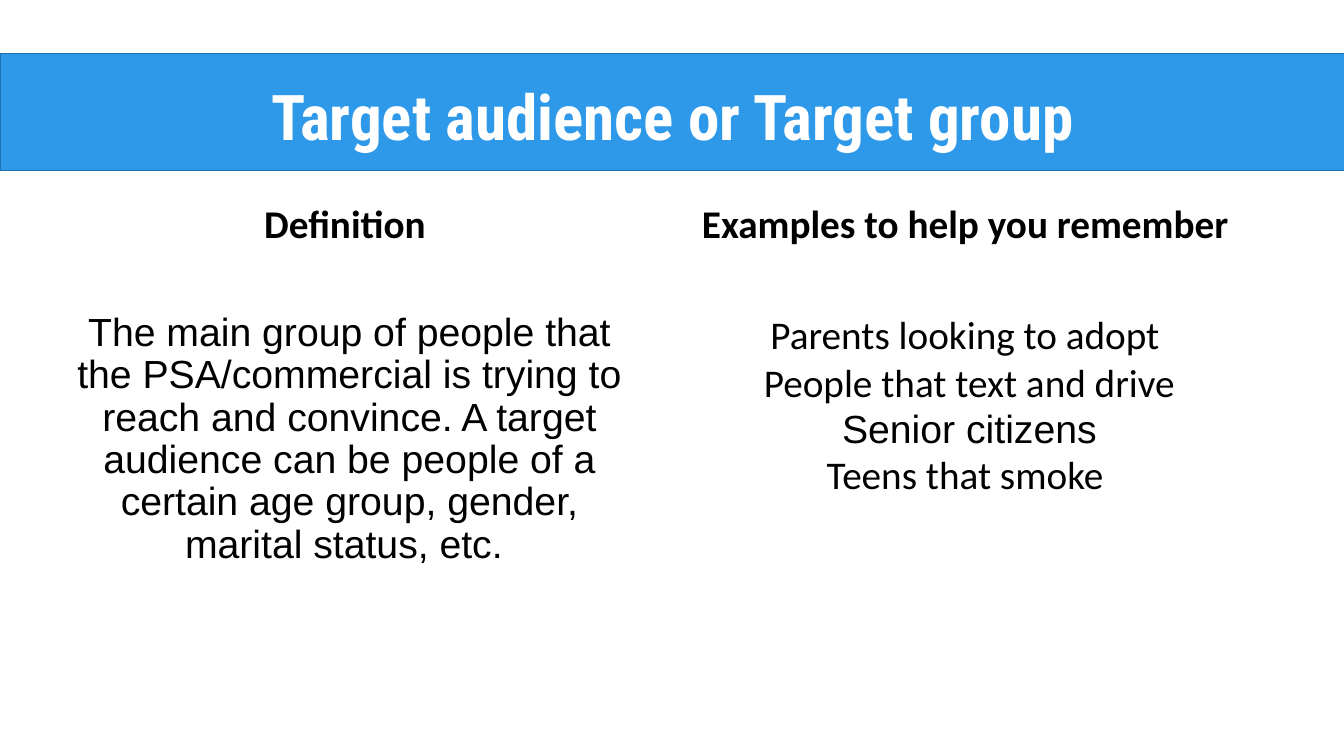
from pptx import Presentation
from pptx.dml.color import RGBColor
from pptx.enum.shapes import MSO_SHAPE
from pptx.enum.text import MSO_ANCHOR, MSO_AUTO_SIZE, PP_ALIGN
from pptx.util import Inches, Pt

RECTANGLE = MSO_SHAPE.RECTANGLE
TOP = MSO_ANCHOR.TOP
CENTER = PP_ALIGN.CENTER
NO_AUTO_SIZE = MSO_AUTO_SIZE.NONE
TITLE_ONLY = 5


def color(value):
    """Turn a hex string into a colour."""
    return RGBColor.from_string(value)


def write(para, text, font="Calibri", size=28, ink="000000", bold=False, spacing=1.0):
    """Put one formatted, centred run of text into a paragraph."""
    para.alignment = CENTER
    para.line_spacing = spacing
    para.space_before = para.space_after = Pt(0)
    span = para.add_run()
    span.text = text
    span.font.name = font
    span.font.size = Pt(size)
    span.font.bold = bold
    span.font.color.rgb = color(ink)


class SlideBuilder:
    """Hold the colours and the current page, and add its elements."""

    banner_fill = "2E99E9"
    banner_line = "2271AC"
    title_ink = "FFFFFF"

    def __init__(self, deck):
        """Add a page with a title to the deck."""
        self.page = deck.slides.add_slide(deck.slide_layouts[TITLE_ONLY])

    def banner(self, left, top, width, height):
        """Add the coloured band behind the title."""
        band = self.page.shapes.add_shape(
            RECTANGLE, Inches(left), Inches(top), Inches(width), Inches(height))
        band.shadow.inherit = False
        band.fill.solid()
        band.fill.fore_color.rgb = color(self.banner_fill)
        band.line.color.rgb = color(self.banner_line)
        band.line.width = Pt(1)

    def title(self, text, left, top, width, height):
        """Place the title in front of the other elements."""
        box = self.page.shapes.title
        box.left, box.top = Inches(left), Inches(top)
        box.width, box.height = Inches(width), Inches(height)
        box.element.getparent().append(box.element)
        frame = box.text_frame
        frame.word_wrap = True
        frame.auto_size = NO_AUTO_SIZE
        frame.vertical_anchor = TOP
        write(frame.paragraphs[0], text, font="Roboto Condensed", size=45,
              ink=self.title_ink, bold=True)

    def table(self, left, top, columns, rows):
        """Add an unfilled table with the given column widths and row heights."""
        grid = self.page.shapes.add_table(
            len(rows), len(columns), Inches(left), Inches(top),
            Inches(sum(columns)), Inches(sum(rows))).table
        grid.first_row = grid.horz_banding = False
        for column, width in zip(grid.columns, columns):
            column.width = Inches(width)
        for row, height in zip(grid.rows, rows):
            row.height = Inches(height)
        for cell in grid.iter_cells():
            cell.fill.background()
        return grid

    def cell(self, cell, lines, margin):
        """Fill a cell with one paragraph for each text and its format."""
        cell.margin_left = cell.margin_right = Inches(margin)
        cell.margin_top = cell.margin_bottom = Inches(0)
        cell.vertical_anchor = TOP
        frame = cell.text_frame
        for index, (text, style) in enumerate(lines):
            para = frame.add_paragraph() if index else frame.paragraphs[0]
            write(para, text, **style)


def main():
    """Build the slide and save it."""
    deck = Presentation()
    deck.slide_width, deck.slide_height = Inches(13.33), Inches(7.5)
    slide = SlideBuilder(deck)
    slide.banner(0, 0.53, 13.39, 1.16)

    grid = slide.table(0.31, 2, columns=[0.37, 5.57, 6.73], rows=[1.1, 4.01])
    headings = ["Definition ", "Examples to help you remember "]
    definition = [
        ("The main group of people that the PSA/commercial is trying to reach and "
         "convince. A target audience can be people of a certain age group, gender, "
         "marital status, etc. ", {"font": "Arial", "spacing": 0.97}),
    ]
    examples = [
        ("Parents looking to adopt ", {}),
        ("People that text and drive", {}),
        ("Senior citizens", {"font": "Arial"}),
        ("Teens that smoke ", {}),
    ]
    for column, (heading, lines) in enumerate(zip(headings, [definition, examples]), 1):
        slide.cell(grid.cell(0, column), [(heading, {"bold": True})], margin=0.06)
        slide.cell(grid.cell(1, column), lines, margin=0.05)

    slide.title("Target audience or Target group ", 0.77, 0.72, 11.94, 1.11)
    deck.save("out.pptx")


if __name__ == "__main__":
    main()
